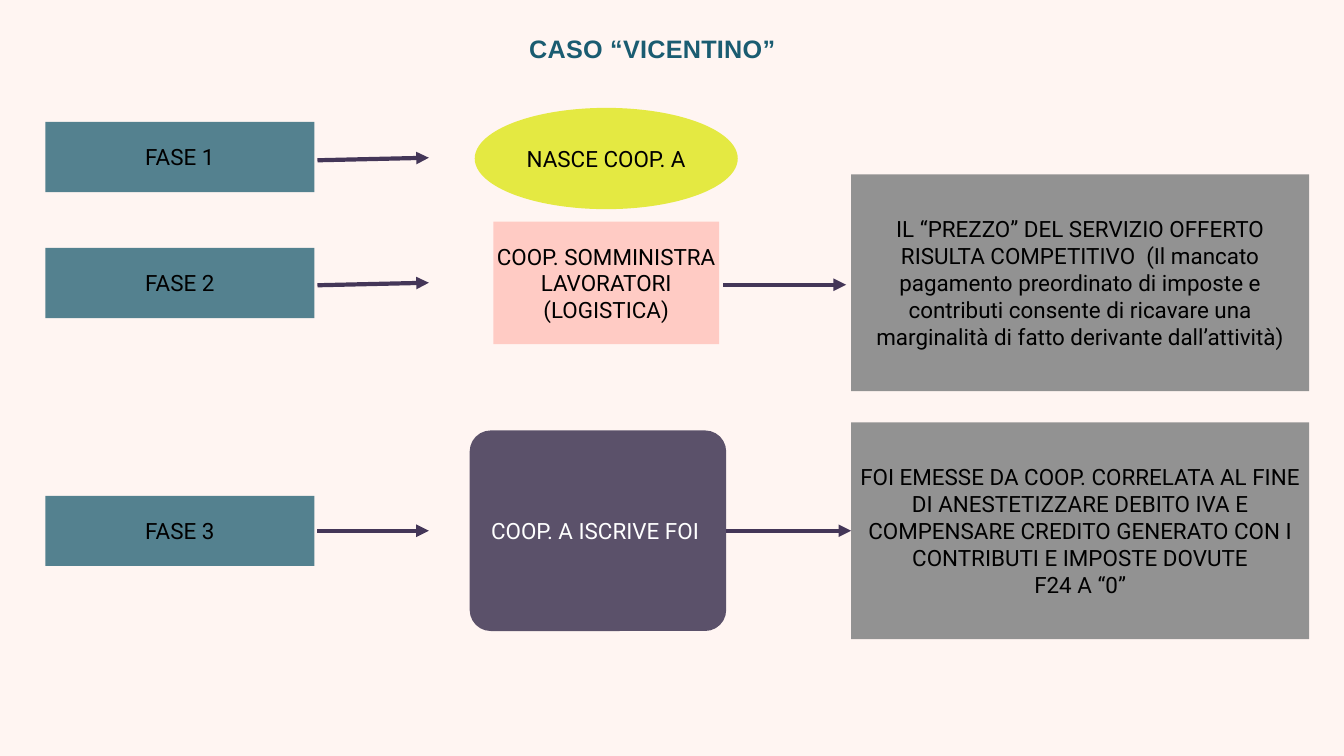
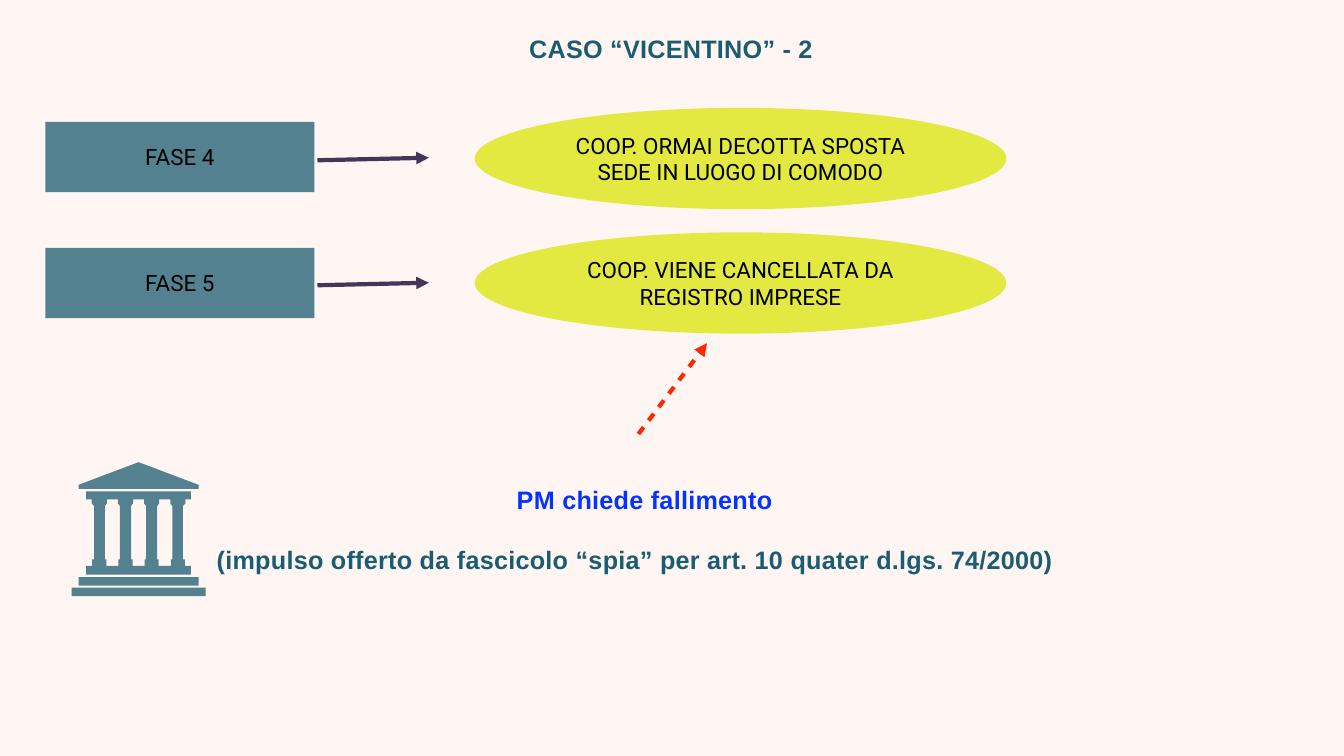
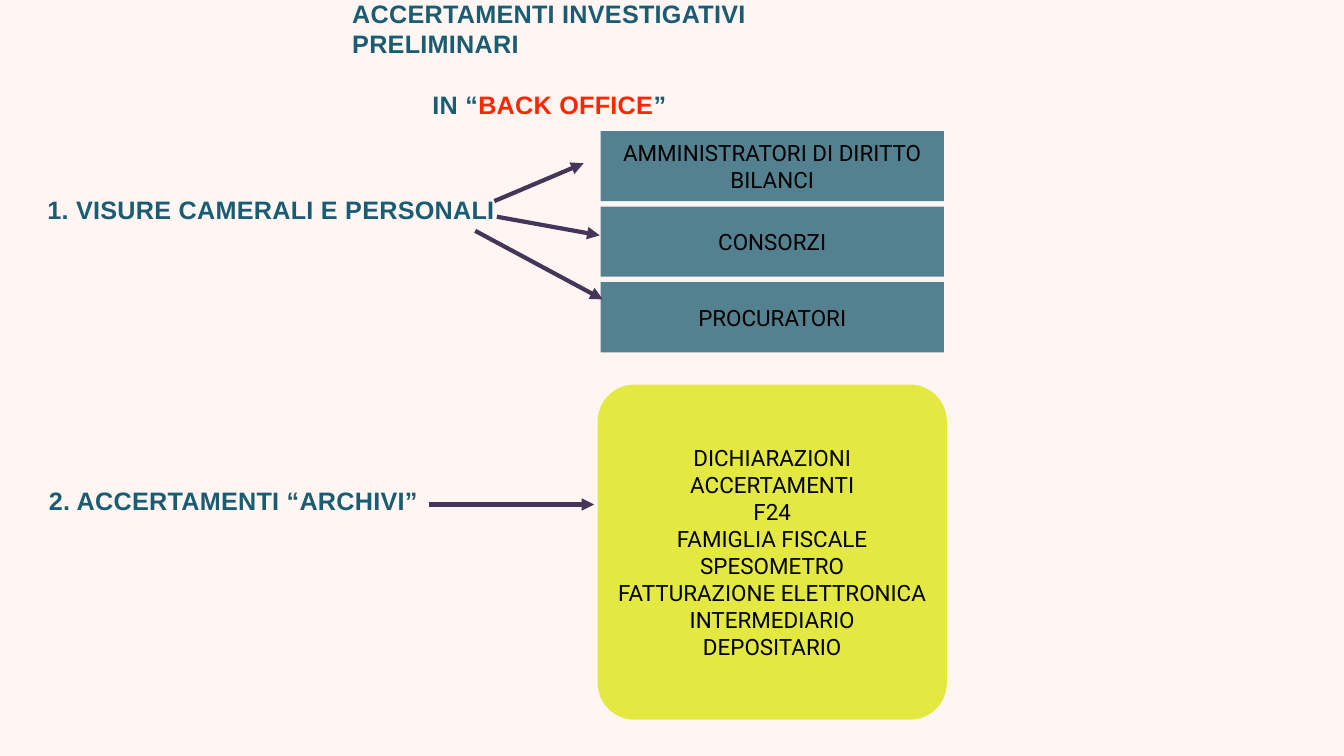
from dataclasses import dataclass

from lxml import etree
from pptx import Presentation
from pptx import util as u
from pptx.dml.color import RGBColor
from pptx.enum import shapes, text
from pptx.oxml.ns import qn


@dataclass(frozen=True)
class Theme:
    background: str = "FFF5F2"
    heading: str = "1A5C71"
    teal: str = "54818F"
    lime: str = "E4E942"
    pink: str = "FFCBC4"
    gray: str = "929292"
    plum: str = "5B516A"
    arrow: str = "443658"
    red: str = "FF2600"
    blue: str = "0433FF"
    black: str = "000000"
    white: str = "FFFFFF"
    heading_font: str = "Arial"
    body_font: str = "Roboto"
    heading_size: int = 36
    body_size: int = 32
    arrow_width: int = 6


theme = Theme()
RECT = shapes.MSO_SHAPE.RECTANGLE
ROUND = shapes.MSO_SHAPE.ROUNDED_RECTANGLE
OVAL = shapes.MSO_SHAPE.OVAL
rgb = RGBColor.from_string


def add_block(slide, at, lines, kind=None, fill=None, color=None, wrap=True, corner=None):
    """Filled shape with centred body text, or a heading when no kind is given."""
    at = [u.Inches(length) for length in at]
    if kind is None:
        block = slide.shapes.add_textbox(*at)
    else:
        block = slide.shapes.add_shape(kind, *at)
        block.shadow.inherit = False
        block.fill.solid()
        block.fill.fore_color.rgb = rgb(fill)
        block.line.fill.background()
        if corner is not None:
            block.adjustments[0] = corner
    frame = block.text_frame
    frame.text = lines
    frame.word_wrap = wrap
    frame.vertical_anchor = text.MSO_ANCHOR.MIDDLE
    frame.margin_left = frame.margin_right = u.Inches(0.06)
    frame.margin_top = frame.margin_bottom = u.Inches(0.06)
    if kind is None:
        frame.auto_size = text.MSO_AUTO_SIZE.SHAPE_TO_FIT_TEXT
    for paragraph in frame.paragraphs:
        if kind is None:
            paragraph.space_before = u.Pt(43)
        else:
            paragraph.alignment = text.PP_ALIGN.CENTER
        for run in paragraph.runs:
            font = run.font
            font.name = theme.heading_font if kind is None else theme.body_font
            font.size = u.Pt(theme.heading_size if kind is None else theme.body_size)
            font.color.rgb = rgb(color or (theme.heading if kind is None else theme.black))
            if kind is None:
                font.bold = True
                run.font._element.set("spc", "40")
    return block


def add_arrow(slide, x1, y1, x2, y2, color=theme.arrow, dashed=False):
    ends = [u.Inches(length) for length in (x1, y1, x2, y2)]
    arrow = slide.shapes.add_connector(shapes.MSO_CONNECTOR.STRAIGHT, *ends)
    arrow.line.color.rgb = rgb(color)
    arrow.line.width = u.Pt(theme.arrow_width)
    outline = arrow.line._get_or_add_ln()
    if dashed:
        dashes = etree.SubElement(outline, qn("a:custDash"))
        etree.SubElement(dashes, qn("a:ds"), d="200000", sp="200000")
    etree.SubElement(outline, qn("a:tailEnd"), type="triangle")
    etree.SubElement(arrow._element.spPr, qn("a:effectLst"))
    return arrow


prs = Presentation()
prs.slide_width, prs.slide_height = u.Inches(26.67), u.Inches(15)
case, case_2, checks = [prs.slides.add_slide(prs.slide_layouts[6]) for _ in range(3)]
for slide in (case, case_2, checks):
    slide.background.fill.solid()
    slide.background.fill.fore_color.rgb = rgb(theme.background)

# Titles of the case slides
add_block(case, (10.44, 0.56, 5.09, 0.79), "CASO “VICENTINO”", wrap=False)
add_block(case_2, (10.44, 0.56, 7.52, 0.79), "CASO “VICENTINO” - 2")

# Phases, each with its arrow: slide, number, top, arrow start and end heights
for slide, number, top, start, end in (
    (case, 1, 2.42, 3.18, 3.13),
    (case, 2, 4.92, 5.66, 5.61),
    (case, 3, 9.84, 10.53, 10.53),
    (case_2, 4, 2.42, 3.18, 3.13),
    (case_2, 5, 4.92, 5.66, 5.61),
):
    add_block(slide, (0.9, top, 5.34, 1.39), f"FASE {number}", RECT, theme.teal)
    add_arrow(slide, 6.3, start, 8.51, end)

# Slide 1: what happens in each phase
add_block(case, (9.42, 2.14, 5.22, 2.01), "NASCE COOP. A", OVAL, theme.lime)
add_block(case, (9.79, 4.4, 4.48, 2.43), "COOP. SOMMINISTRA LAVORATORI\n(LOGISTICA)",
          RECT, theme.pink)
invoices = add_block(case, (9.32, 8.54, 5.09, 3.98), "COOP. A ISCRIVE FOI ",
                     ROUND, theme.plum, theme.white, corner=0.105)

# Slide 1: consequences
add_block(case, (16.89, 3.46, 9.09, 4.3),
          "IL “PREZZO” DEL SERVIZIO OFFERTO RISULTA COMPETITIVO  (Il mancato pagamento "
          "preordinato di imposte e contributi consente di ricavare una marginalità di "
          "fatto derivante dall’attività)", RECT, theme.gray)
offsetting = add_block(case, (16.89, 8.38, 9.09, 4.3),
                       "FOI EMESSE DA COOP. CORRELATA AL FINE DI ANESTETIZZARE DEBITO IVA E "
                       "COMPENSARE CREDITO GENERATO CON I CONTRIBUTI E IMPOSTE DOVUTE\n"
                       "F24 A “0”", RECT, theme.gray)
add_arrow(case, 14.35, 5.65, 16.79, 5.65)
invoices_to_offsetting = add_arrow(case, 14.41, 10.53, 16.89, 10.53)
invoices_to_offsetting.begin_connect(invoices, 3)
invoices_to_offsetting.end_connect(offsetting, 1)

# Slide 2: end of the cooperative
for top, event in (
    (2.14, "COOP. ORMAI DECOTTA SPOSTA SEDE IN LUOGO DI COMODO"),
    (4.61, "COOP. VIENE CANCELLATA DA REGISTRO IMPRESE"),
):
    add_block(case_2, (9.42, top, 10.55, 2.01), event, OVAL, theme.lime)

# Slide 2: courthouse, with roof, colonnade, gaps between columns and steps
outlines = [
    [(2.75, 9.17), (1.56, 9.62), (1.56, 9.7), (3.94, 9.7), (3.94, 9.62)],
    [(1.71, 9.75), (1.71, 9.91), (1.82, 9.91), (1.82, 9.99), (1.87, 10.04), (1.87, 11.1),
     (1.83, 11.1), (1.83, 11.23), (1.71, 11.23), (1.71, 11.4), (3.79, 11.4), (3.79, 11.23),
     (3.67, 11.23), (3.67, 11.1), (3.63, 11.1), (3.63, 10.04), (3.68, 9.99), (3.68, 9.91),
     (3.79, 9.91), (3.79, 9.75)],
]
for gap in range(3):
    middle = 2.23 + 0.52 * gap
    left_side = [(0.11, 9.91), (0.11, 9.99), (0.15, 10.04), (0.15, 11.1), (0.12, 11.1), (0.12, 11.23)]
    outlines.append([(middle - dx, y) for dx, y in left_side]
                    + [(middle + dx, y) for dx, y in reversed(left_side)])
for left, right, top in ((1.56, 3.94, 11.45), (1.42, 4.08, 11.66)):
    outlines.append([(left, top), (left, top + 0.17), (right, top + 0.17), (right, top)])
outlines = [[(u.Inches(x), u.Inches(y)) for x, y in outline] for outline in outlines]
builder = case_2.shapes.build_freeform(*outlines[0][0])
for outline in outlines:
    if outline is not outlines[0]:
        builder.move_to(*outline[0])
    builder.add_line_segments(outline[1:], close=True)
courthouse = builder.convert_to_shape()
courthouse.shadow.inherit = False
courthouse.fill.solid()
courthouse.fill.fore_color.rgb = rgb(theme.teal)
courthouse.line.fill.background()

# Slide 2: bankruptcy request
request = add_block(case_2, (4.24, 8.83, 17.25, 3.35),
                    "PM chiede fallimento \n"
                    "(impulso offerto da fascicolo “spia” per art. 10 quater d.lgs. 74/2000)",
                    wrap=False)
request_line = request.text_frame.paragraphs[0]
request_line.alignment = text.PP_ALIGN.CENTER
request_line.runs[0].font.color.rgb = rgb(theme.blue)
add_arrow(case_2, 12.67, 8.61, 14.03, 6.81, theme.red, dashed=True)

# Slide 3: title with the highlighted words
checks_title = add_block(checks, (6.93, 0.13, 11.36, 2.07),
                         "ACCERTAMENTI INVESTIGATIVI PRELIMINARI\nIN “", wrap=False)
back_office = checks_title.text_frame.paragraphs[1]
back_office.alignment = text.PP_ALIGN.CENTER
for words, color in (("BACK OFFICE", theme.red), ("”", theme.heading)):
    run = back_office.add_run()
    run.text = words
    run.font.name = theme.heading_font
    run.font.size = u.Pt(theme.heading_size)
    run.font.bold = True
    run.font.color.rgb = rgb(color)
    run.font._element.set("spc", "40")

# Slide 3: the two kinds of checks
add_block(checks, (0.88, 3.75, 9.03, 0.79), "1. VISURE CAMERALI E PERSONALI")
add_block(checks, (0.91, 9.54, 7.76, 0.79), "2. ACCERTAMENTI “ARCHIVI”")

# Slide 3: what the checks look at
for row, subject in enumerate(("AMMINISTRATORI DI DIRITTO\nBILANCI", "CONSORZI", "PROCURATORI")):
    add_block(checks, (11.92, 2.6 + 1.5 * row, 6.81, 1.39), subject, RECT, theme.teal)
add_block(checks, (11.86, 7.63, 6.93, 6.65),
          "DICHIARAZIONI\nACCERTAMENTI\nF24\nFAMIGLIA FISCALE\nSPESOMETRO\n"
          "FATTURAZIONE ELETTRONICA\nINTERMEDIARIO\nDEPOSITARIO",
          ROUND, theme.lime, corner=0.11)
for ends in ((9.81, 3.99, 11.58, 3.24), (9.86, 4.3, 11.9, 4.67),
             (9.43, 4.58, 11.96, 5.94), (8.51, 10.01, 11.79, 10.01)):
    add_arrow(checks, *ends)

prs.save("out.pptx")
